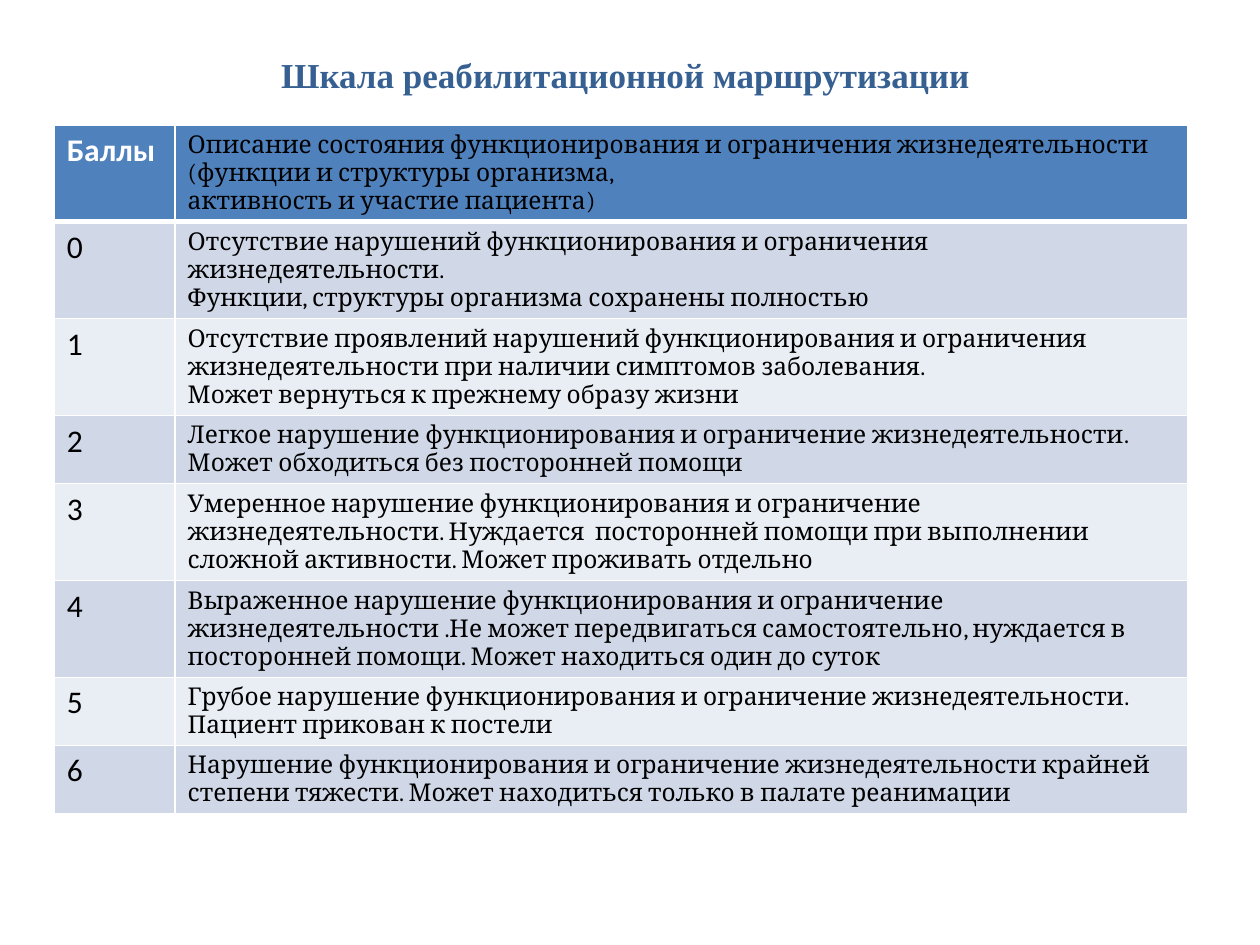
from pptx import Presentation
from pptx.dml.color import RGBColor
from pptx.enum.text import MSO_ANCHOR as Anchor, PP_ALIGN as Align
from pptx.oxml.ns import qn
from pptx.util import Inches, Pt
from lxml.etree import SubElement

COLORS = {
    "title": "376092",
    "header": "4F81BD",
    "odd": "D0D8E8",
    "even": "E9EDF4",
    "white": "FFFFFF",
    "black": "000000",
}
TITLE = "Шкала реабилитационной маршрутизации"
HEADER = (
    "Баллы",
    "Описание состояния функционирования и ограничения жизнедеятельности "
    "(функции и структуры организма,\vактивность и участие пациента)",
)
DESCRIPTIONS = [
    "Отсутствие нарушений функционирования и ограничения жизнедеятельности.\v"
    "Функции, структуры организма сохранены полностью",
    "Отсутствие проявлений нарушений функционирования и ограничения "
    "жизнедеятельности при наличии симптомов заболевания.\n"
    "Может вернуться к прежнему образу жизни",
    "Легкое нарушение функционирования и ограничение жизнедеятельности. "
    "Может обходиться без посторонней помощи",
    "Умеренное нарушение функционирования и ограничение жизнедеятельности. "
    "Нуждается  посторонней помощи при выполнении сложной активности. "
    "Может проживать отдельно",
    "Выраженное нарушение функционирования и ограничение жизнедеятельности "
    ".Не может передвигаться самостоятельно, нуждается в посторонней помощи. "
    "Может находиться один до суток",
    "Грубое нарушение функционирования и ограничение жизнедеятельности. "
    "Пациент прикован к постели",
    "Нарушение функционирования и ограничение жизнедеятельности крайней "
    "степени тяжести. Может находиться только в палате реанимации",
]
COLUMN_WIDTHS = (0.96, 8.04)
LINE_COUNTS = (3, 3, 3, 2, 3, 3, 2, 2)
ROW_HEIGHTS = {2: 0.54, 3: 0.77}


def color(name):
    return RGBColor.from_string(COLORS[name])


def style_text(text_frame, font_name, size, color_name, bold=False):
    for paragraph in text_frame.paragraphs:
        font = paragraph.font
        font.name, font.size, font.bold = font_name, Pt(size), bold
        font.color.rgb = color(color_name)


def add_title(slide):
    box = slide.shapes.add_textbox(Inches(0.5), Inches(0.3), Inches(9), Inches(1.25))
    text_frame = box.text_frame
    text_frame.word_wrap = True
    text_frame.vertical_anchor = Anchor.MIDDLE
    text_frame.margin_right = Inches(0.17)
    text_frame.margin_bottom = Inches(0.71)
    text_frame.text = TITLE
    text_frame.paragraphs[0].alignment = Align.CENTER
    style_text(text_frame, "Times New Roman", 20, "title", bold=True)


def set_borders(cell, top, bottom):
    properties = cell._tc.get_or_add_tcPr()
    for side, width in (("L", 1), ("R", 1), ("T", top), ("B", bottom)):
        line = SubElement(properties, qn(f"a:ln{side}"), w=str(Pt(width)))
        fill = SubElement(line, qn("a:solidFill"))
        SubElement(fill, qn("a:srgbClr"), val=COLORS["white"])


def fill_cell(cell, text, row, is_score):
    set_borders(cell, top=3 if row == 1 else 1, bottom=3 if row == 0 else 1)
    cell.fill.solid()
    cell.fill.fore_color.rgb = color("header" if row == 0 else "odd" if row % 2 else "even")
    cell.text = text
    if is_score:
        is_header = row == 0
        style_text(cell.text_frame, "Calibri", 18, "white" if is_header else "black", is_header)
    else:
        cell.vertical_anchor = Anchor.MIDDLE
        cell.margin_top = cell.margin_bottom = Inches(0.03)
        style_text(cell.text_frame, "Cambria", 14, "black")


def add_scale_table(slide):
    rows = [HEADER] + [(str(score), text) for score, text in enumerate(DESCRIPTIONS)]
    heights = [ROW_HEIGHTS[count] for count in LINE_COUNTS]
    table = slide.shapes.add_table(
        len(rows), len(COLUMN_WIDTHS), Inches(0.43), Inches(0.99),
        Inches(sum(COLUMN_WIDTHS)), Inches(sum(heights)),
    ).table
    for column, width in zip(table.columns, COLUMN_WIDTHS):
        column.width = Inches(width)
    for row, (texts, height) in enumerate(zip(rows, heights)):
        table.rows[row].height = Inches(height)
        for column, text in enumerate(texts):
            fill_cell(table.cell(row, column), text, row, is_score=column == 0)


def main():
    presentation = Presentation()
    presentation.slide_width, presentation.slide_height = Inches(10), Inches(7.5)
    slide = presentation.slides.add_slide(presentation.slide_layouts[6])
    add_title(slide)
    add_scale_table(slide)
    presentation.save("out.pptx")


if __name__ == "__main__":
    main()
